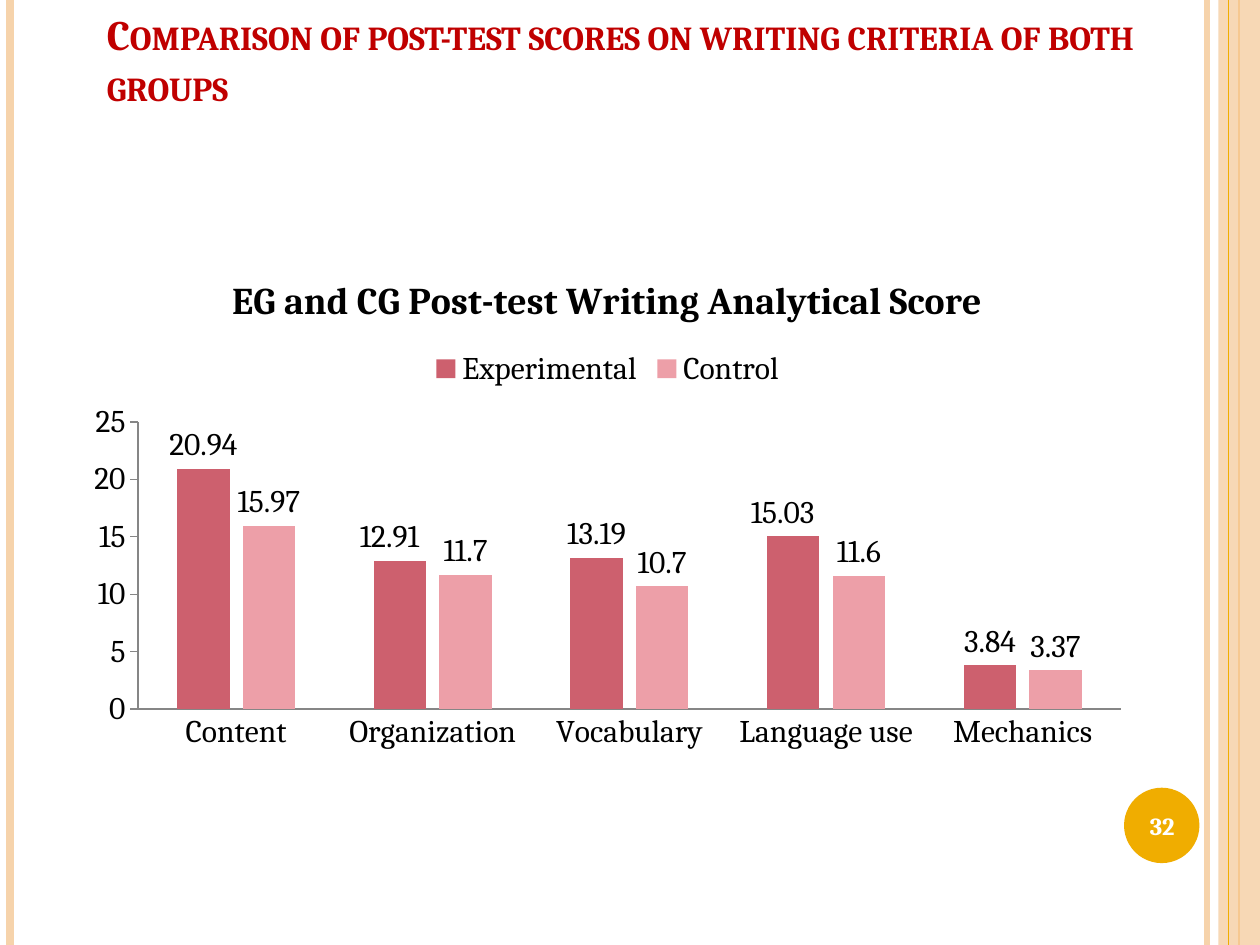
from lxml import etree
from pptx import Presentation
from pptx.chart.data import CategoryChartData
from pptx.dml.color import RGBColor
from pptx.enum.chart import XL_CHART_TYPE, XL_LABEL_POSITION, XL_LEGEND_POSITION, XL_TICK_MARK
from pptx.enum.shapes import MSO_CONNECTOR, MSO_SHAPE
from pptx.enum.text import MSO_ANCHOR, MSO_AUTO_SIZE, PP_ALIGN
from pptx.oxml import parse_xml
from pptx.oxml.ns import nsdecls, qn
from pptx.util import Cm, Pt

COLUMNS = XL_CHART_TYPE.COLUMN_CLUSTERED
OUTSIDE_END = XL_LABEL_POSITION.OUTSIDE_END
LEGEND_TOP = XL_LEGEND_POSITION.TOP
TICK_NONE, TICK_OUTSIDE = XL_TICK_MARK.NONE, XL_TICK_MARK.OUTSIDE
STRAIGHT = MSO_CONNECTOR.STRAIGHT
RECTANGLE, OVAL = MSO_SHAPE.RECTANGLE, MSO_SHAPE.OVAL
BOTTOM, MIDDLE = MSO_ANCHOR.BOTTOM, MSO_ANCHOR.MIDDLE
NO_FIT = MSO_AUTO_SIZE.NONE
LEFT, CENTER = PP_ALIGN.LEFT, PP_ALIGN.CENTER

PEACH = RGBColor(0xF6, 0xD3, 0xAB)
DEEP_PEACH = RGBColor(0xF6, 0xC8, 0x90)
GOLD = RGBColor(0xF0, 0xAD, 0x00)
RED = RGBColor(0xC0, 0x00, 0x00)
ROSE = RGBColor(0xCD, 0x60, 0x6E)
PINK = RGBColor(0xED, 0x9F, 0xA8)
GRAY = RGBColor(0x86, 0x86, 0x86)
BLACK = RGBColor(0x00, 0x00, 0x00)
WHITE = RGBColor(0xFF, 0xFF, 0xFF)

FONT = "Cambria"
WIDTH, HEIGHT = Cm(25.4), Cm(19.05)
CATEGORIES = ["Content", "Organization", "Vocabulary", "Language use", "Mechanics"]
SERIES = [
    ("Experimental", [20.94, 12.91, 13.19, 15.03, 3.84], ROSE),
    ("Control", [15.97, 11.7, 10.7, 11.6, 3.37], PINK),
]
SHIFTED_LABELS = (1, 3)


def style_font(font, size, color, bold=False):
    """Apply the slide's typeface with a size, colour and weight."""
    font.name, font.size, font.bold = FONT, Pt(size), bold
    font.color.rgb = color


def add_run(p, text, size, color):
    """Append a bold run to a paragraph."""
    r = p.add_run()
    r.text = text
    style_font(r.font, size, color, True)
    return r


def add_stripe(s, x, width, color):
    """Draw a vertical line down the full height of the slide."""
    line = s.shapes.add_connector(STRAIGHT, Cm(x), 0, Cm(x), HEIGHT)
    line.line.color.rgb = color
    line.line.width = Pt(width)
    etree.SubElement(line._element.spPr, qn("a:effectLst"))


def add_solid(s, kind, x, y, w, h, color):
    """Draw a filled shape without outline or shadow."""
    sp = s.shapes.add_shape(kind, x, y, w, h)
    sp.shadow.inherit = False
    sp.fill.solid()
    sp.fill.fore_color.rgb = color
    sp.line.fill.background()
    return sp


def add_frame(s):
    """Draw the stripes, the side band and the page number disc."""
    add_stripe(s, 24.33, 3, PEACH)
    add_stripe(s, 0.2, 4.5, PEACH)
    band = add_solid(s, RECTANGLE, Cm(24.56), 0, Cm(0.84), HEIGHT, PEACH)
    alpha = etree.SubElement(band._element.spPr.find(".//" + qn("a:srgbClr")), qn("a:alpha"))
    alpha.set("val", "87000")
    add_stripe(s, 24.98, 1.5, DEEP_PEACH)
    add_stripe(s, 24.77, 0.75, GOLD)
    add_solid(s, OVAL, Cm(22.66), Cm(15.88), Cm(1.52), Cm(1.52), GOLD)


def set_title(s, text):
    """Place and fill the title in small capitals."""
    sp = s.shapes.title
    sp.left, sp.top, sp.width, sp.height = Cm(1.9), Cm(0.64), Cm(22.22), Cm(1.7)
    tf = sp.text_frame
    tf.auto_size, tf.vertical_anchor, tf.word_wrap = NO_FIT, BOTTOM, True
    p = tf.paragraphs[0]
    p.alignment = LEFT
    r = add_run(p, text, 24, RED)
    r.font._element.set("cap", "small")


def add_page_number(s, text):
    """Write the page number over its disc."""
    tf = s.shapes.add_textbox(Cm(22.58), Cm(15.93), Cm(1.7), Cm(1.45)).text_frame
    tf.word_wrap, tf.vertical_anchor = True, MIDDLE
    p = tf.paragraphs[0]
    p.alignment = CENTER
    add_run(p, text, 14, WHITE)


def style_axis(axis, tick):
    """Give an axis a thin gray line, a tick style and no gridlines."""
    axis.has_major_gridlines = False
    axis.major_tick_mark, axis.minor_tick_mark = tick, TICK_NONE
    axis.format.line.color.rgb = GRAY
    axis.format.line.width = Pt(0.75)


def shift_label(series, index):
    """Move one data label slightly to the left."""
    label = series.points[index].data_label
    style_font(label.font, 18, BLACK)
    label.position = OUTSIDE_END
    idx = series._element.findall(".//" + qn("c:dLbl") + "/" + qn("c:idx"))[-1]
    idx.addnext(parse_xml(
        f'<c:layout {nsdecls("c")}><c:manualLayout><c:x val="-0.01"/>'
        '<c:y val="0"/></c:manualLayout></c:layout>'))


def style_series(series, color):
    """Colour a series and label its columns."""
    series.format.fill.solid()
    series.format.fill.fore_color.rgb = color
    labels = series.data_labels
    labels.show_value, labels.position = True, OUTSIDE_END
    style_font(labels.font, 18, BLACK)


def add_score_chart(s, title):
    """Add the clustered column chart of scores by criterion."""
    data = CategoryChartData()
    data.categories = CATEGORIES
    for name, values, _ in SERIES:
        data.add_series(name, values)
    chart = s.shapes.add_chart(COLUMNS, Cm(1.47), Cm(5.08), Cm(21.56), Cm(10.26), data).chart
    style_font(chart.font, 18, BLACK)
    chart.has_title = True
    add_run(chart.chart_title.text_frame.paragraphs[0], title, 21.6, BLACK)
    chart.has_legend = True
    chart.legend.position = LEGEND_TOP
    chart.legend.include_in_layout = False
    plot = chart.plots[0]
    plot.vary_by_categories = False
    plot.gap_width, plot.overlap = 150, -25
    style_axis(chart.category_axis, TICK_NONE)
    style_axis(chart.value_axis, TICK_OUTSIDE)
    chart.value_axis.minimum_scale, chart.value_axis.maximum_scale = 0, 25
    chart.value_axis.major_unit = 5
    for series, (_, _, color) in zip(plot.series, SERIES):
        style_series(series, color)
    for index in SHIFTED_LABELS:
        shift_label(plot.series[0], index)


def main():
    """Build the slide and save it."""
    prs = Presentation()
    prs.slide_width, prs.slide_height = WIDTH, HEIGHT
    s = prs.slides.add_slide(prs.slide_layouts[5])
    add_frame(s)
    set_title(s, "Comparison of post-test scores on writing criteria of both groups")
    add_score_chart(s, "EG and CG Post-test Writing Analytical Score")
    add_page_number(s, "32")
    prs.save("out.pptx")


if __name__ == "__main__":
    main()
